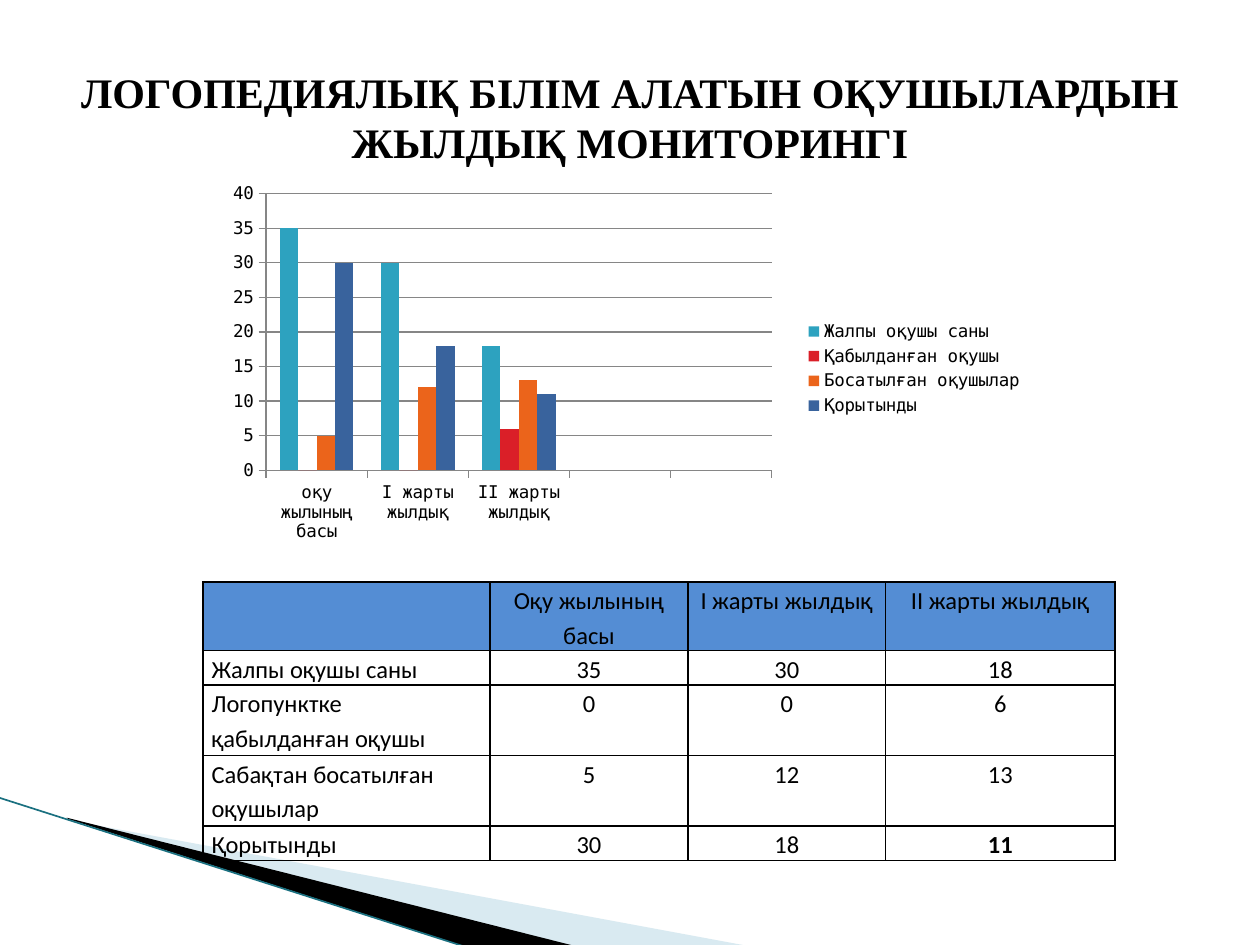
from dataclasses import dataclass

from lxml import etree
from pptx import Presentation, util as u
from pptx.chart.data import CategoryChartData
from pptx.dml.color import RGBColor
from pptx.enum import chart as ch, shapes, text
from pptx.oxml import parse_xml
from pptx.oxml.ns import nsdecls, qn

COLORS = {
    "black": "000000",
    "pale": "A0CBDC",
    "edge": "1A7080",
    "header": "548DD4",
    "grid": "868686",
    "total": "2DA2BF",
    "admitted": "DA1F28",
    "released": "EB641B",
    "result": "39639D",
}
PLOT_AREA = {"x": 0.076, "y": 0.048, "w": 0.607, "h": 0.715}
COLUMN_WIDTHS = [2.28, 1.57, 1.57, 1.82]
ROW_HEIGHTS = [0.54, 0.27, 0.56, 0.56, 0.27]
HEADINGS = ["", "Оқу жылының басы", "I жарты жылдық", "II жарты жылдық"]
CATEGORIES = ["оқу жылының басы", "I жарты жылдық", "II жарты жылдық", "", ""]


@dataclass
class Measure:
    legend: str
    label: str
    values: list[int]
    color: str


@dataclass
class Wedge:
    points: list[tuple[float, float]]
    color: str
    opacity: int = 100


MEASURES = [
    Measure("Жалпы оқушы саны", "Жалпы оқушы саны", [35, 30, 18], "total"),
    Measure("Қабылданған оқушы", "Логопунктке қабылданған оқушы", [0, 0, 6], "admitted"),
    Measure("Босатылған оқушылар", "Сабақтан босатылған оқушылар", [5, 12, 13], "released"),
    Measure("Қорытынды", "Қорытынды", [30, 18, 11], "result"),
]
WEDGES = [
    Wedge([(0.55, 6.51), (5.95, 7.51), (4.56, 7.51), (0.55, 6.5)], "pale", 40),
    Wedge([(0.53, 6.49), (4.57, 7.51), (3.72, 7.52), (0.54, 6.5)], "black"),
]


def rgb(name: str) -> RGBColor:
    return RGBColor.from_string(COLORS[name])


def write(frame, content: str, *, size: float, font: str, bold: bool = False,
          align=text.PP_ALIGN.CENTER, spacing: float = 1.0) -> None:
    frame.text = content
    para = frame.paragraphs[0]
    para.alignment = align
    para.line_spacing = spacing
    para.font.size = u.Pt(size)
    for span in para.runs:
        span.font.size = u.Pt(size)
        span.font.name = font
        span.font.bold = bold
        span.font.color.rgb = rgb("black")


def draw_wedge(page, wedge: Wedge) -> None:
    corners = [(u.Inches(x), u.Inches(y)) for x, y in wedge.points]
    builder = page.shapes.build_freeform(*corners[0])
    builder.add_line_segments(corners[1:], close=True)
    shape = builder.convert_to_shape()
    shape.shadow.inherit = False
    shape.fill.solid()
    shape.fill.fore_color.rgb = rgb(wedge.color)
    shape.line.fill.background()
    if wedge.opacity < 100:
        color = shape.fill._xPr.find(qn("a:solidFill"))[0]
        etree.SubElement(color, qn("a:alpha"), val=str(wedge.opacity * 1000))


def draw_edge(page) -> None:
    line = page.shapes.add_connector(
        shapes.MSO_CONNECTOR.STRAIGHT,
        u.Inches(-0.01), u.Inches(6.33), u.Inches(3.71), u.Inches(7.52))
    line.line.color.rgb = rgb("edge")
    line.line.width = u.Pt(0.95)
    etree.SubElement(line._element.spPr, qn("a:effectLst"))


def place_plot(chart) -> None:
    plot_area = chart._chartSpace.chart.plotArea
    for old in plot_area.findall(qn("c:layout")):
        plot_area.remove(old)
    modes = '<c:layoutTarget val="inner"/><c:xMode val="edge"/><c:yMode val="edge"/>'
    sizes = "".join(f'<c:{key} val="{value}"/>' for key, value in PLOT_AREA.items())
    plot_area.insert(0, parse_xml(
        f'<c:layout {nsdecls("c")}><c:manualLayout>{modes}{sizes}</c:manualLayout></c:layout>'))


def draw_chart(page) -> None:
    data = CategoryChartData()
    data.categories = CATEGORIES
    for measure in MEASURES:
        data.add_series(measure.legend, measure.values + [None, None])
    chart = page.shapes.add_chart(
        ch.XL_CHART_TYPE.COLUMN_CLUSTERED,
        u.Inches(1.61), u.Inches(1.39), u.Inches(6.61), u.Inches(3.07), data).chart
    chart.has_title = False
    chart.font.size = u.Pt(10)
    chart.font.name = "DejaVu Sans Mono"
    chart.font.color.rgb = rgb("black")
    chart.has_legend = True
    chart.legend.position = ch.XL_LEGEND_POSITION.RIGHT
    chart.legend.include_in_layout = False
    plot = chart.plots[0]
    plot.gap_width = 150
    plot.overlap = 0
    plot.vary_by_categories = False
    for series, measure in zip(plot.series, MEASURES):
        series.format.fill.solid()
        series.format.fill.fore_color.rgb = rgb(measure.color)
    for axis in (chart.category_axis, chart.value_axis):
        axis.major_tick_mark = ch.XL_TICK_MARK.OUTSIDE
        axis.format.line.color.rgb = rgb("grid")
    scale = chart.value_axis
    scale.minimum_scale, scale.maximum_scale, scale.major_unit = 0, 40, 5
    scale.has_major_gridlines = True
    scale.major_gridlines.format.line.color.rgb = rgb("grid")
    place_plot(chart)


def style_cell(cell, filled: bool) -> None:
    cell.margin_left = cell.margin_right = u.Inches(0.07)
    cell.margin_top = cell.margin_bottom = 0
    if filled:
        cell.fill.solid()
        cell.fill.fore_color.rgb = rgb("header")
    else:
        cell.fill.background()
    properties = cell._tc.get_or_add_tcPr()
    for index, side in enumerate(("lnL", "lnR", "lnT", "lnB")):
        properties.insert(index, parse_xml(
            f'<a:{side} {nsdecls("a")} w="12700"><a:solidFill>'
            f'<a:srgbClr val="{COLORS["black"]}"/></a:solidFill></a:{side}>'))


def draw_table(page) -> None:
    rows = [HEADINGS] + [[m.label, *map(str, m.values)] for m in MEASURES]
    table = page.shapes.add_table(
        len(rows), len(HEADINGS), u.Inches(1.61), u.Inches(4.62),
        u.Inches(sum(COLUMN_WIDTHS)), u.Inches(sum(ROW_HEIGHTS))).table
    for column, width in zip(table.columns, COLUMN_WIDTHS):
        column.width = u.Inches(width)
    for row, height in zip(table.rows, ROW_HEIGHTS):
        row.height = u.Inches(height)
    last = (len(rows) - 1, len(HEADINGS) - 1)
    for r, values in enumerate(rows):
        for c, value in enumerate(values):
            cell = table.cell(r, c)
            style_cell(cell, filled=r == 0)
            write(cell.text_frame, value, size=14, font="Calibri", bold=(r, c) == last,
                  align=text.PP_ALIGN.CENTER if r == 0 or c else text.PP_ALIGN.LEFT,
                  spacing=1.15)


def main() -> None:
    deck = Presentation()
    deck.slide_width, deck.slide_height = u.Inches(10), u.Inches(7.5)
    page = deck.slides.add_slide(deck.slide_layouts[5])
    for wedge in WEDGES:
        draw_wedge(page, wedge)
    draw_edge(page)
    title = page.shapes.title
    title.left, title.top = u.Inches(0.5), u.Inches(0.3)
    title.width, title.height = u.Inches(9), u.Inches(1.25)
    title.text_frame.vertical_anchor = text.MSO_ANCHOR.MIDDLE
    write(title.text_frame, "ЛОГОПЕДИЯЛЫҚ БІЛІМ АЛАТЫН ОҚУШЫЛАРДЫН\vЖЫЛДЫҚ МОНИТОРИНГІ",
          size=24, font="Times New Roman", bold=True)
    draw_chart(page)
    draw_table(page)
    deck.save("out.pptx")


if __name__ == "__main__":
    main()
